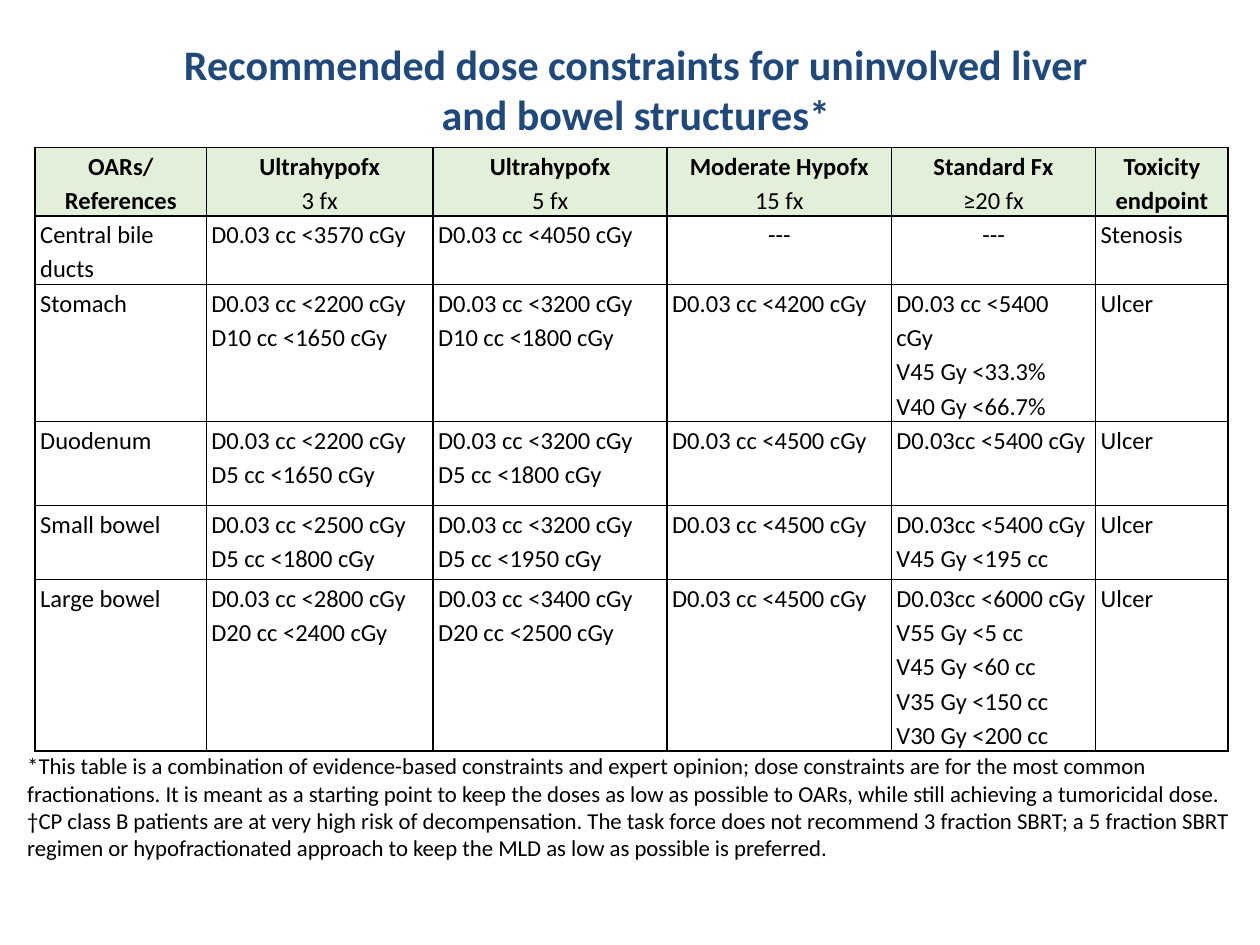
from dataclasses import dataclass

from lxml.etree import SubElement
from pptx import Presentation
from pptx.dml.color import RGBColor as Rgb
from pptx.enum.text import MSO_ANCHOR as Anchor, MSO_AUTO_SIZE as Fit, PP_ALIGN as Align
from pptx.oxml.ns import qn
from pptx.util import Cm, Pt

FONT = "Calibri"
COLORS = {"title": "1F497D", "text": "000000", "line": "000000", "head": "E2EFD9"}

WIDTHS = [3.45, 4.57, 4.72, 4.52, 4.12, 2.67]
HEIGHTS = [1.35, 1.35, 2.75, 1.69, 1.49, 3.44]

TITLE = ["Recommended dose constraints for uninvolved liver", "and bowel structures*"]
NOTES = [
    "*This table is a combination of evidence-based constraints and expert opinion; "
    "dose constraints are for the most common fractionations. It is meant as a starting "
    "point to keep the doses as low as possible to OARs, while still achieving a "
    "tumoricidal dose.",
    "†CP class B patients are at very high risk of decompensation. The task force does "
    "not recommend 3 fraction SBRT; a 5 fraction SBRT regimen or hypofractionated "
    "approach to keep the MLD as low as possible is preferred.",
]


@dataclass
class Head:
    lines: list[str]
    bold: list[bool]


@dataclass
class Organ:
    name: str
    doses: list[list[str]]
    toxic: str = "Ulcer"


HEADS = [
    Head(["OARs/", "References"], [True, True]),
    Head(["Ultrahypofx", "3 fx"], [True, False]),
    Head(["Ultrahypofx", "5 fx"], [True, False]),
    Head(["Moderate Hypofx", "15 fx"], [True, False]),
    Head(["Standard Fx", "≥20 fx"], [True, False]),
    Head(["Toxicity endpoint"], [True]),
]

ORGANS = [
    Organ("Central bile ducts",
          [["D0.03 cc <3570 cGy"], ["D0.03 cc <4050 cGy"], ["---"], ["---"]],
          "Stenosis"),
    Organ("Stomach",
          [["D0.03 cc <2200 cGy", "D10 cc <1650 cGy"],
           ["D0.03 cc <3200 cGy", "D10 cc <1800 cGy"],
           ["D0.03 cc <4200 cGy"],
           ["D0.03 cc <5400 cGy", "V45 Gy <33.3%", "V40 Gy <66.7%"]]),
    Organ("Duodenum",
          [["D0.03 cc <2200 cGy", "D5 cc <1650 cGy"],
           ["D0.03 cc <3200 cGy", "D5 cc <1800 cGy"],
           ["D0.03 cc <4500 cGy"],
           ["D0.03cc <5400 cGy"]]),
    Organ("Small bowel",
          [["D0.03 cc <2500 cGy", "D5 cc <1800 cGy"],
           ["D0.03 cc <3200 cGy", "D5 cc <1950 cGy"],
           ["D0.03 cc <4500 cGy"],
           ["D0.03cc <5400 cGy", "V45 Gy <195 cc"]]),
    Organ("Large bowel",
          [["D0.03 cc <2800 cGy", "D20 cc <2400 cGy"],
           ["D0.03 cc <3400 cGy", "D20 cc <2500 cGy"],
           ["D0.03 cc <4500 cGy"],
           ["D0.03cc <6000 cGy", "V55 Gy <5 cc", "V45 Gy <60 cc",
            "V35 Gy <150 cc", "V30 Gy <200 cc"]]),
]


def add_run(para, text: str, size: int, color: str = "text", bold: bool = False) -> None:
    run = para.add_run()
    run.text = text
    font = run.font
    font.name, font.size, font.bold = FONT, Pt(size), bold
    font.color.rgb = Rgb.from_string(COLORS[color])


def next_para(frame, first: bool):
    return frame.paragraphs[0] if first else frame.add_paragraph()


def add_edges(cell) -> None:
    """Border all four sides; must run before the fill is set."""
    props = cell._tc.get_or_add_tcPr()
    for side in ("lnL", "lnR", "lnT", "lnB"):
        line = SubElement(props, qn(f"a:{side}"), w=str(Pt(1)))
        fill = SubElement(line, qn("a:solidFill"))
        SubElement(fill, qn("a:srgbClr"), val=COLORS["line"])


def fill_cell(cell, lines: list[str], bold: list[bool], head: bool = False) -> None:
    cell.margin_left = cell.margin_right = Cm(0.1)
    cell.margin_top = cell.margin_bottom = 0
    cell.vertical_anchor = Anchor.MIDDLE if head else Anchor.TOP
    add_edges(cell)
    if head:
        cell.fill.solid()
        cell.fill.fore_color.rgb = Rgb.from_string(COLORS["head"])
    else:
        cell.fill.background()
    for i, (text, strong) in enumerate(zip(lines, bold)):
        para = next_para(cell.text_frame, i == 0)
        para.line_spacing = 1.15
        para.alignment = Align.CENTER if head or text == "---" else Align.LEFT
        add_run(para, text, 14, bold=strong)


def add_title(slide) -> None:
    title = slide.shapes.title
    title.left, title.top, title.width, title.height = Cm(0.97), Cm(0.64), Cm(23.7), Cm(1.9)
    frame = title.text_frame
    frame.auto_size, frame.vertical_anchor = Fit.NONE, Anchor.TOP
    para = frame.paragraphs[0]
    para.alignment = Align.CENTER
    for i, text in enumerate(TITLE):
        if i:
            para.add_line_break()
        add_run(para, text, 24, "title", True)


def add_grid(slide) -> None:
    table = slide.shapes.add_table(
        len(HEIGHTS), len(WIDTHS), Cm(0.71), Cm(2.97), Cm(sum(WIDTHS)), Cm(sum(HEIGHTS))
    ).table
    table.first_row = table.horz_banding = False
    for col, width in zip(table.columns, WIDTHS):
        col.width = Cm(width)
    for row, height in zip(table.rows, HEIGHTS):
        row.height = Cm(height)
    for c, head in enumerate(HEADS):
        fill_cell(table.cell(0, c), head.lines, head.bold, True)
    for r, organ in enumerate(ORGANS, 1):
        for c, lines in enumerate([[organ.name], *organ.doses, [organ.toxic]]):
            fill_cell(table.cell(r, c), lines, [False] * len(lines))


def add_notes(slide) -> None:
    box = slide.shapes.add_textbox(Cm(0.3), Cm(15.04), Cm(25.2), Cm(2.5))
    frame = box.text_frame
    frame.word_wrap = True
    for i, text in enumerate(NOTES):
        add_run(next_para(frame, i == 0), text, 13)


def main() -> None:
    deck = Presentation()
    deck.slide_width, deck.slide_height = Cm(25.4), Cm(19.05)
    slide = deck.slides.add_slide(deck.slide_layouts[5])
    add_title(slide)
    add_grid(slide)
    add_notes(slide)
    deck.save("out.pptx")


if __name__ == "__main__":
    main()
